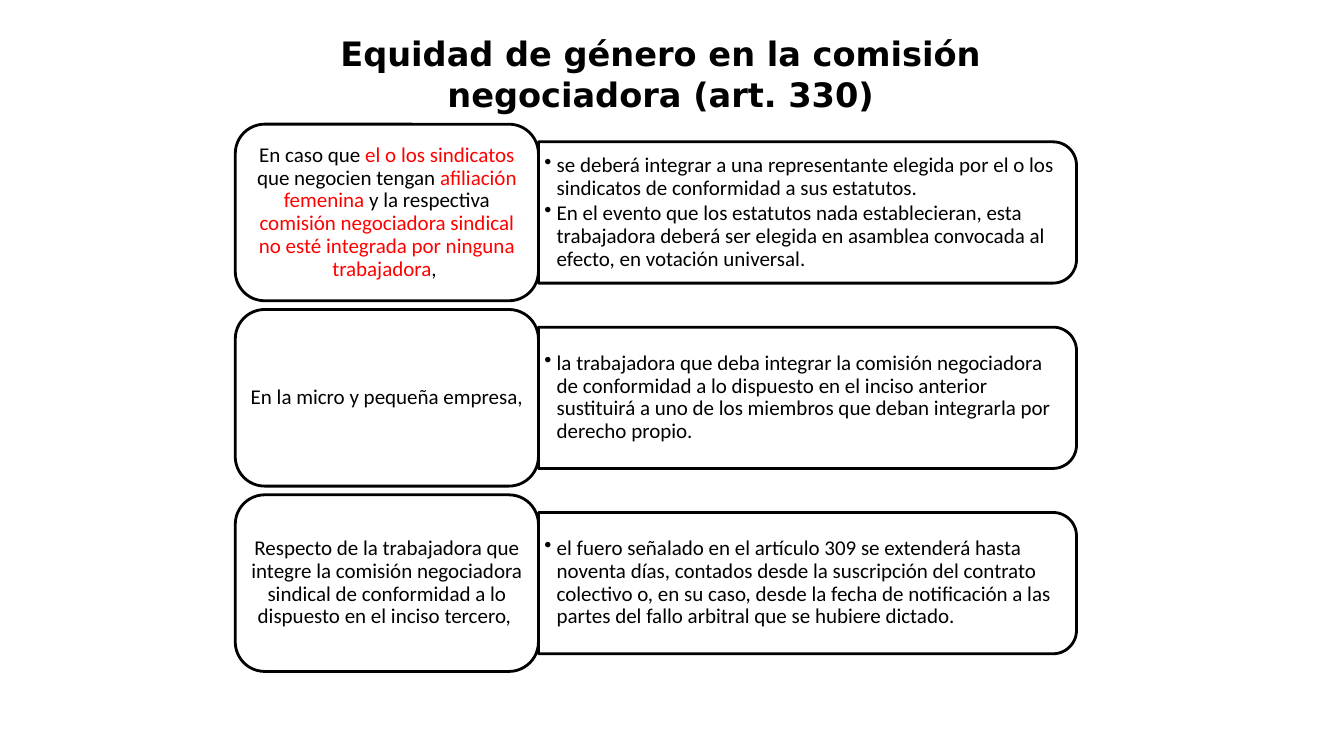
"""Build the slide on gender equity in the negotiating committee."""
import dataclasses
import itertools
import math

import lxml.etree
import pptx
import pptx.dml.color
import pptx.enum.shapes
import pptx.enum.text
import pptx.oxml.ns
import pptx.util

Cm = pptx.util.Cm
Pt = pptx.util.Pt
qn = pptx.oxml.ns.qn
ALIGN = pptx.enum.text.PP_ALIGN
SHAPES = pptx.enum.shapes.MSO_SHAPE


@dataclasses.dataclass(frozen=True)
class Theme:
    black: str = "000000"
    white: str = "FFFFFF"
    emphasis: str = "FF0000"
    title_font: str = "DejaVu Sans"
    body_font: str = "Calibri"
    title_size: int = 24
    body_size: int = 15


theme = Theme()


def paint(shape, fill, line):
    shape.shadow.inherit = False
    shape.fill.solid()
    shape.fill.fore_color.rgb = pptx.dml.color.RGBColor.from_string(fill)
    shape.line.color.rgb = pptx.dml.color.RGBColor.from_string(line)
    shape.line.width = Pt(2)


def write_text(shape, paragraphs, *, font, size, insets, bold=False,
               align=ALIGN.CENTER, spacing=1.0, after=0, indent=None):
    """Write paragraphs in which every second part between bars is emphasised."""
    frame = shape.text_frame
    frame.word_wrap = True
    frame.vertical_anchor = pptx.enum.text.MSO_ANCHOR.MIDDLE
    frame.margin_left, frame.margin_top, frame.margin_right, frame.margin_bottom = map(Cm, insets)
    for index, text in enumerate(paragraphs):
        paragraph = frame.add_paragraph() if index else frame.paragraphs[0]
        paragraph.alignment = align
        paragraph.line_spacing = spacing
        paragraph.space_after = Pt(after)
        if indent is not None:
            properties = paragraph._p.get_or_add_pPr()
            properties.set("marL", str(Cm(indent)))
            properties.set("indent", str(-Cm(indent)))
            lxml.etree.SubElement(properties, qn("a:buChar"), char="•")
        colors = itertools.cycle([theme.black, theme.emphasis])
        for part, color in zip(text.split("|"), colors):
            run = paragraph.add_run()
            run.text = part
            run.font.name = font
            run.font.size = Pt(size)
            run.font.bold = bold
            run.font.color.rgb = pptx.dml.color.RGBColor.from_string(color)


presentation = pptx.Presentation()
presentation.slide_width = Cm(33.87)
presentation.slide_height = Cm(19.05)
slide = presentation.slides.add_slide(presentation.slide_layouts[6])

title = slide.shapes.add_textbox(Cm(6.15), Cm(0.66), Cm(21), Cm(2.39))
write_text(title, ["Equidad de género en la comisión negociadora (art. 330)"],
           font=theme.title_font, size=theme.title_size, bold=True,
           insets=(0.25, 0.13, 0.25, 0.13))

rows = [
    ("En caso que |el o los sindicatos |que negocien tengan |afiliación femenina| y la respectiva "
     "|comisión negociadora sindical no esté integrada por ninguna trabajadora|, ",
     ["se deberá integrar a una representante elegida por el o los sindicatos de conformidad "
      "a sus estatutos.",
      "En el evento que los estatutos nada establecieran, esta trabajadora deberá ser elegida "
      "en asamblea convocada al efecto, en votación universal."]),
    ("En la micro y pequeña empresa, ",
     ["la trabajadora que deba integrar la comisión negociadora de conformidad a lo dispuesto "
      "en el inciso anterior sustituirá a uno de los miembros que deban integrarla por "
      "derecho propio."]),
    ("Respecto de la trabajadora que integre la comisión negociadora sindical de conformidad "
     "a lo dispuesto en el inciso tercero, ",
     ["el fuero señalado en el artículo 309 se extenderá hasta noventa días, contados desde la "
      "suscripción del contrato colectivo o, en su caso, desde la fecha de notificación a las "
      "partes del fallo arbitral que se hubiere dictado."]),
]
case_left, case_top, case_width, case_height = 5.93, 3.13, 7.64, 4.45
row_pitch = 4.67
rule_left, rule_width, rule_height = case_left + case_width, 13.56, 3.56
corner = 0.59
arc = [math.radians(angle) for angle in range(0, 91, 6)]

for row, (case_text, rule_texts) in enumerate(rows):
    top = case_top + row * row_pitch
    rule_top = top + (case_height - rule_height) / 2
    right, bottom = rule_left + rule_width, rule_top + rule_height
    upper = [(right - corner + corner * math.sin(angle),
              rule_top + corner - corner * math.cos(angle)) for angle in arc]
    lower = [(right - corner + corner * math.cos(angle),
              bottom - corner + corner * math.sin(angle)) for angle in arc]
    outline = [(Cm(x), Cm(y)) for x, y in [*upper, *lower, (rule_left, bottom)]]
    builder = slide.shapes.build_freeform(Cm(rule_left), Cm(rule_top))
    builder.add_line_segments(outline, close=True)
    rule = builder.convert_to_shape()
    paint(rule, theme.white, theme.black)
    fill_color = rule._element.spPr.find(qn("a:solidFill")).find(qn("a:srgbClr"))
    lxml.etree.SubElement(fill_color, qn("a:alpha"), val="90000")
    write_text(rule, rule_texts, font=theme.body_font, size=theme.body_size,
               align=ALIGN.LEFT, spacing=0.9, after=2.25, indent=0.31,
               insets=(0.15, 0.25, 0.33, 0.25))

    case = slide.shapes.add_shape(SHAPES.ROUNDED_RECTANGLE, Cm(case_left), Cm(top),
                                  Cm(case_width), Cm(case_height))
    paint(case, theme.white, theme.black)
    write_text(case, [case_text], font=theme.body_font, size=theme.body_size,
               spacing=0.9, insets=(0.16, 0.09, 0.16, 0.09))

presentation.save("out.pptx")
